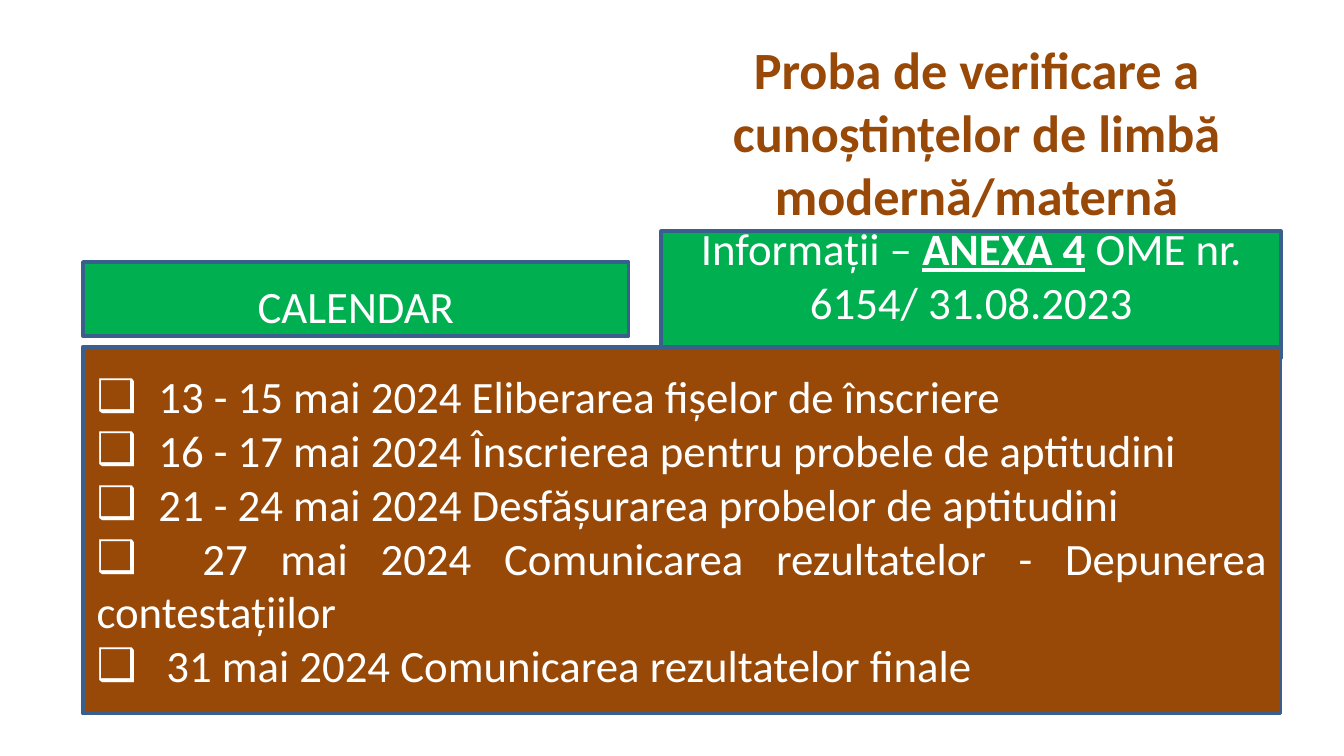
from typing import NamedTuple

from lxml.etree import SubElement
from pptx import Presentation
from pptx.dml.color import RGBColor
from pptx.enum.shapes import MSO_SHAPE as Shape
from pptx.enum.text import MSO_ANCHOR as Anchor, MSO_AUTO_SIZE as Fit, PP_ALIGN as Align
from pptx.oxml.ns import qn
from pptx.util import Cm, Pt

GREEN = RGBColor(0x00, 0xB0, 0x50)
BROWN = RGBColor(0x98, 0x48, 0x07)
BLUE = RGBColor(0x3A, 0x5F, 0x8C)
WHITE = RGBColor(0xFF, 0xFF, 0xFF)
FONT = "Calibri"


class Box(NamedTuple):
    left: float
    top: float
    width: float
    height: float


class Banner(NamedTuple):
    box: Box
    runs: list[tuple[str, bool]]  # wording, stressed or not
    above: float  # top inset
    below: float  # bottom inset


class Step(NamedTuple):
    text: str
    tab: float  # where the wording starts after the bullet


BANNERS = [
    Banner(Box(12.5, 4.37, 11.71, 2.39),
           [("Informații – ", False), ("ANEXA 4", True),
            (" OME nr. 6154/ 31.08.2023", False)], 0, 0.76),
    Banner(Box(1.57, 4.95, 10.31, 1.4), [("CALENDAR", False)], 0.25, 0),
]
STEPS = [
    Step("13 - 15 mai 2024 Eliberarea fișelor de înscriere", 1.17),
    Step("16 - 17 mai 2024 Înscrierea pentru probele de aptitudini", 1.17),
    Step("21 - 24 mai 2024 Desfășurarea probelor de aptitudini", 1.17),
    Step("27 mai 2024 Comunicarea rezultatelor - Depunerea contestațiilor", 2),
    Step("31 mai 2024 Comunicarea rezultatelor finale", 1.32),
]


def place(shape, box: Box) -> None:
    shape.left, shape.top, shape.width, shape.height = map(Cm, box)


def paint(shape, fill: RGBColor) -> None:
    shape.fill.solid()
    shape.fill.fore_color.rgb = fill
    shape.line.color.rgb = BLUE
    shape.line.width = Pt(2)


def frame(shape, anchor: Anchor):
    text = shape.text_frame
    text.word_wrap = True
    text.auto_size = Fit.NONE
    text.vertical_anchor = anchor
    return text


def write(para, text: str, *, size: float = 24, color: RGBColor = WHITE,
          bold: bool = False, line: bool = False, align: Align = Align.CENTER) -> None:
    para.alignment = align
    para.space_before = Pt(0)
    run = para.add_run()
    run.text = text
    font = run.font
    font.name, font.size = FONT, Pt(size)
    font.bold, font.underline = bold, line
    font.color.rgb = color


def mark(para, tab: float) -> None:
    """Give the paragraph a box bullet and one tab stop."""
    props = para._p.get_or_add_pPr()
    props.set("marL", "0")
    props.set("indent", "0")
    SubElement(props, qn("a:buFont"), typeface="Arial")
    SubElement(props, qn("a:buChar"), char="❑")
    stops = SubElement(props, qn("a:tabLst"))
    SubElement(stops, qn("a:tab"), pos=str(Cm(tab)), algn="l")


def draw_banner(slide, banner: Banner) -> None:
    shape = slide.shapes.add_shape(Shape.RECTANGLE, *map(Cm, banner.box))
    shape.shadow.inherit = False
    paint(shape, GREEN)
    text = frame(shape, Anchor.MIDDLE)
    text.margin_top, text.margin_bottom = Cm(banner.above), Cm(banner.below)
    for words, stress in banner.runs:
        write(text.paragraphs[0], words, bold=stress, line=stress)


def draw_steps(slide, body, steps: list[Step]) -> None:
    place(body, Box(1.57, 6.55, 22.63, 6.93))
    paint(body, BROWN)
    text = frame(body, Anchor.MIDDLE)
    for i, step in enumerate(steps):
        para = text.add_paragraph() if i else text.paragraphs[0]
        mark(para, step.tab)
        write(para, "\t" + step.text, align=Align.JUSTIFY)
    # The list lies over the lower edge of the banner
    slide.shapes._spTree.append(body._element)


def main() -> None:
    deck = Presentation()
    deck.slide_width, deck.slide_height = Cm(25.4), Cm(14.28)
    slide = deck.slides.add_slide(deck.slide_layouts[1])

    # Title
    title = slide.shapes.title
    place(title, Box(13.49, 0.58, 9.93, 3.84))
    write(frame(title, Anchor.TOP).paragraphs[0],
          "Proba de verificare a cunoștințelor de limbă modernă/maternă",
          size=28, color=BROWN, bold=True)

    # Green banners
    for banner in BANNERS:
        draw_banner(slide, banner)

    # Calendar list
    draw_steps(slide, slide.placeholders[1], STEPS)
    deck.save("out.pptx")


if __name__ == "__main__":
    main()
